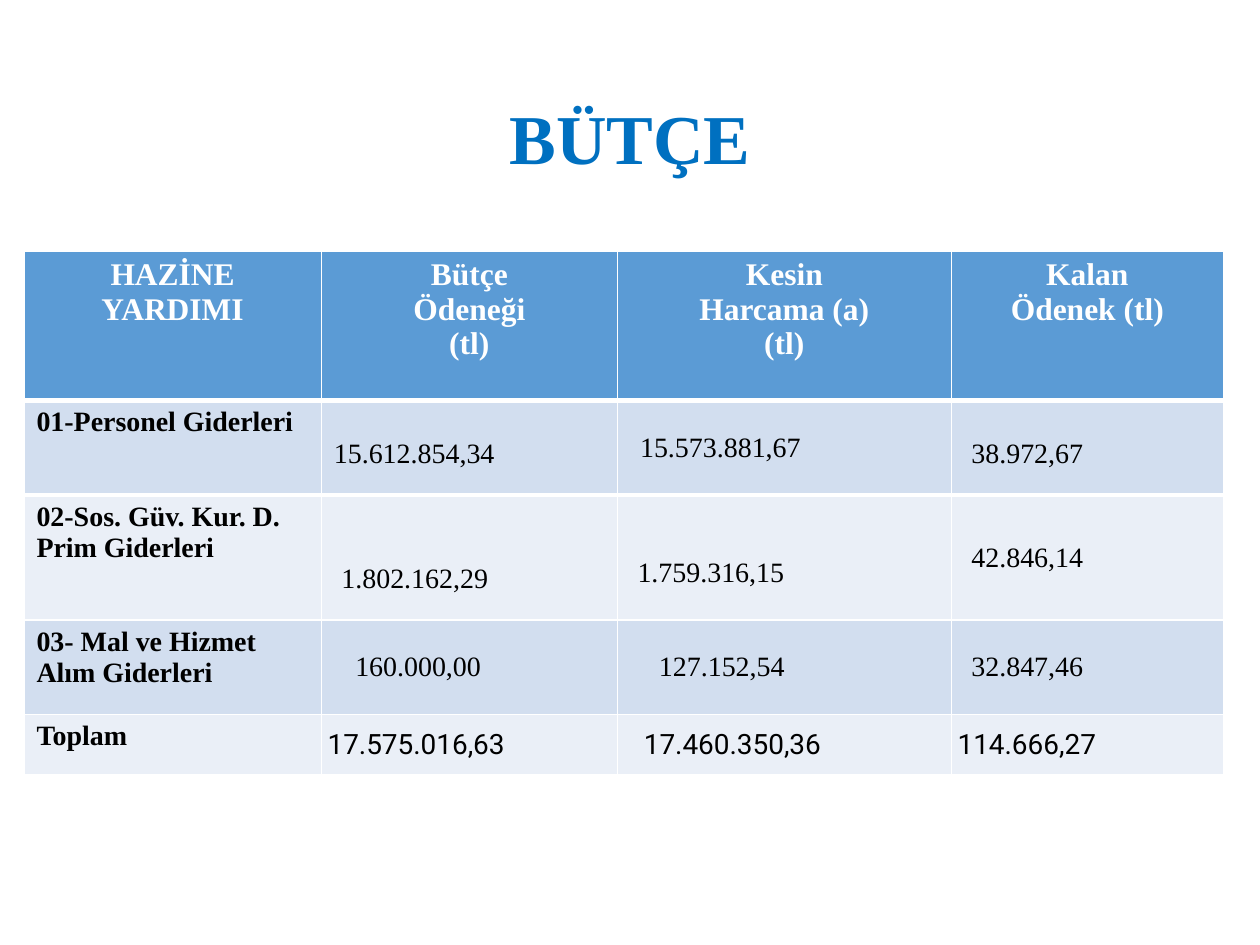
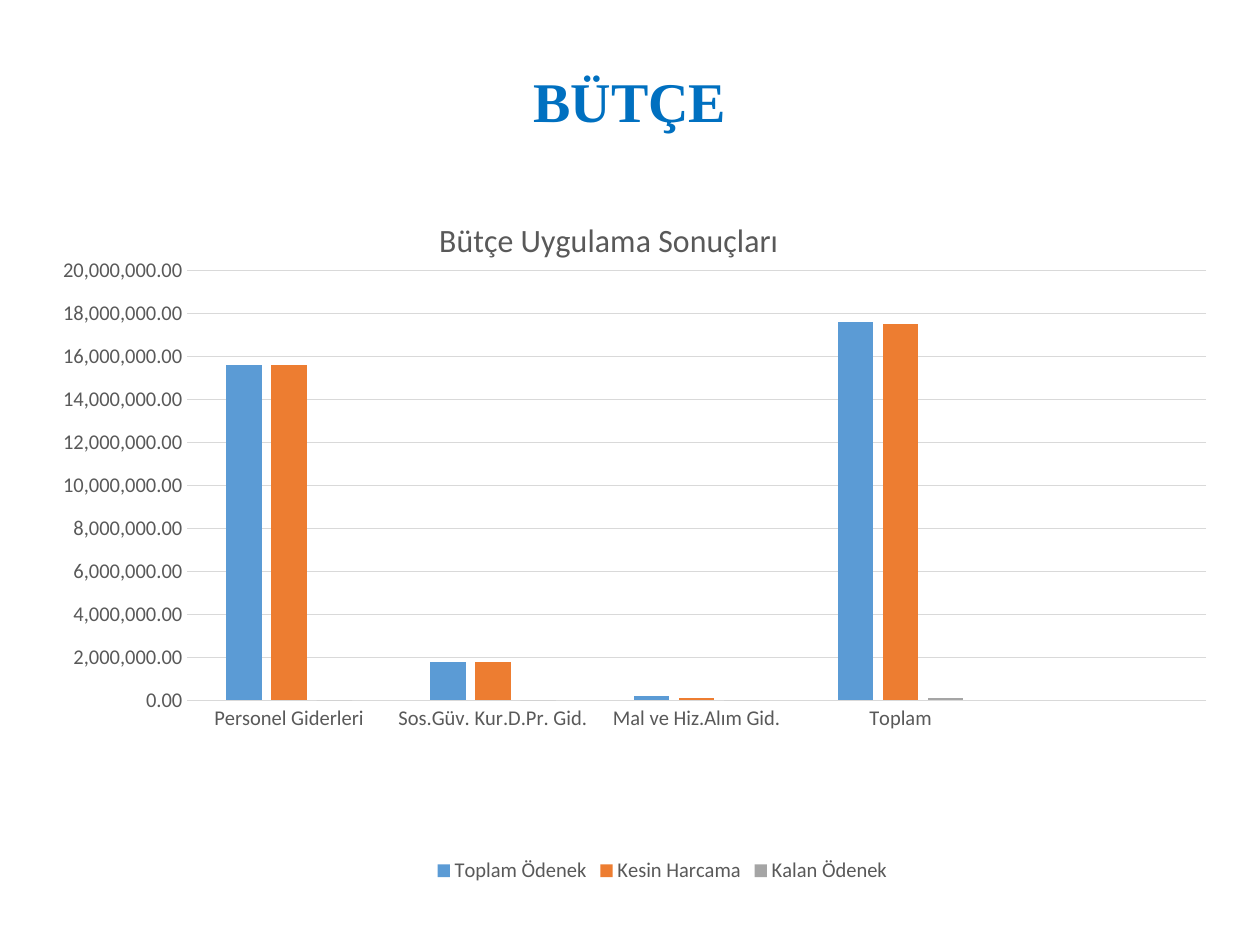
from lxml import etree
from pptx import Presentation
from pptx.chart.data import CategoryChartData
from pptx.dml.color import RGBColor
from pptx.enum.chart import XL_CHART_TYPE as CHART, XL_LEGEND_POSITION as LEGEND, XL_TICK_MARK as TICK
from pptx.enum.text import MSO_ANCHOR as ANCHOR, PP_ALIGN as ALIGN
from pptx.oxml.ns import qn
from pptx.util import Inches, Pt

TITLE_BLUE = RGBColor(0x00, 0x70, 0xC0)
WHITE = RGBColor(0xFF, 0xFF, 0xFF)
BLACK = RGBColor(0x00, 0x00, 0x00)
BLUE = RGBColor(0x5B, 0x9B, 0xD5)
ORANGE = RGBColor(0xED, 0x7D, 0x31)
GRAY = RGBColor(0xA5, 0xA5, 0xA5)
BAND_DARK = RGBColor(0xD2, 0xDE, 0xEF)
BAND_LIGHT = RGBColor(0xEA, 0xEF, 0xF7)
CHART_TEXT = RGBColor(0x59, 0x59, 0x59)
GRID = RGBColor(0xD9, 0xD9, 0xD9)

SERIF, SANS, TOTAL_FONT = "Times New Roman", "Calibri", "Roboto"
HEADER_FONT = {"name": SERIF, "size": Pt(18), "bold": True, "color": WHITE}
LABEL_FONT = {"name": SERIF, "size": Pt(16), "bold": True, "color": BLACK}
AMOUNT_FONT = {**LABEL_FONT, "bold": False}
TOTAL_AMOUNT_FONT = {**AMOUNT_FONT, "name": TOTAL_FONT}
CHART_FONT = {"name": SANS, "size": Pt(12), "bold": False, "color": CHART_TEXT}

COL_WIDTHS = [2.36, 2.35, 2.65, 2.16]
ROW_HEIGHTS = [1.19, 0.75, 0.99, 0.75, 0.48]
HEADERS = ["HAZİNE YARDIMI", "Bütçe\nÖdeneği\n(tl)",
           "Kesin\nHarcama (a)\n(tl)", "Kalan\nÖdenek (tl)"]
# Each amount: text, left inset, drop below the middle of the row
BUDGET = [
    ("01-Personel Giderleri",
     [("15.612.854,34", 0.1, 0.05), ("15.573.881,67", 0.18, 0), ("38.972,67", 0.16, 0.05)]),
    ("02-Sos. Güv. Kur. D. Prim Giderleri",
     [("1.802.162,29", 0.16, 0.17), ("1.759.316,15", 0.16, 0.12), ("42.846,14", 0.16, 0)]),
    ("03- Mal ve Hizmet Alım Giderleri",
     [("160.000,00", 0.27, 0), ("127.152,54", 0.33, 0), ("32.847,46", 0.16, 0)]),
    ("Toplam",
     [("17.575.016,63", 0.05, 0), ("17.460.350,36", 0.21, 0), ("114.666,27", 0.05, 0)]),
]
# The empty last category leaves room at the right of the chart
CATEGORIES = ["Personel Giderleri", "Sos.Güv. Kur.D.Pr. Gid.", "Mal ve Hiz.Alım Gid.", "Toplam", ""]
SERIES = [("Toplam Ödenek", BLUE), ("Kesin Harcama", ORANGE), ("Kalan Ödenek", GRAY)]


def format_font(font, values):
    for name, value in values.items():
        if name == "color":
            font.color.rgb = value
        else:
            setattr(font, name, value)


def add_titled_slide(prs, text, box, size):
    slide = prs.slides.add_slide(prs.slide_layouts[5])
    title = slide.shapes.title
    title.left, title.top, title.width, title.height = map(Inches, box)
    tf = title.text_frame
    tf.text = text
    tf.vertical_anchor = ANCHOR.MIDDLE
    p = tf.paragraphs[0]
    p.alignment, p.line_spacing = ALIGN.CENTER, 0.9
    format_font(p.runs[0].font, {"name": SERIF, "size": Pt(size), "bold": True, "color": TITLE_BLUE})
    return slide


def fill_cell(cell, text, fill, font, align=ALIGN.LEFT):
    cell.fill.solid()
    cell.fill.fore_color.rgb = fill
    cell.text_frame.text = text
    for p in cell.text_frame.paragraphs:
        p.alignment = align
        format_font(p.runs[0].font, font)


def fill_amount(cell, amount, fill, font):
    text, inset, drop = amount
    fill_cell(cell, text, fill, font)
    cell.vertical_anchor = ANCHOR.MIDDLE
    cell.margin_left, cell.margin_right = Inches(inset), Inches(0.05)
    cell.margin_top, cell.margin_bottom = Inches(2 * drop), 0


def rule_below_header(frame):
    """Draw the thick white line between the header and the first row."""
    rows = list(frame.element.iter(qn("a:tr")))
    for row, side in zip(rows, ("a:lnB", "a:lnT")):
        for props in row.iter(qn("a:tcPr")):
            line = etree.Element(qn(side), w=str(Pt(3)))
            fill = etree.SubElement(line, qn("a:solidFill"))
            etree.SubElement(fill, qn("a:srgbClr")).set("val", str(WHITE))
            props.insert(0, line)


def add_budget_table(slide):
    frame = slide.shapes.add_table(
        len(ROW_HEIGHTS), len(COL_WIDTHS), Inches(0.19), Inches(1.99),
        Inches(sum(COL_WIDTHS)), Inches(sum(ROW_HEIGHTS)))
    table = frame.table
    for column, width in zip(table.columns, COL_WIDTHS):
        column.width = Inches(width)
    for row, height in zip(table.rows, ROW_HEIGHTS):
        row.height = Inches(height)
    for col, header in enumerate(HEADERS):
        fill_cell(table.cell(0, col), header, BLUE, HEADER_FONT, ALIGN.CENTER)
    for row, (label, amounts) in enumerate(BUDGET, 1):
        band = BAND_DARK if row % 2 else BAND_LIGHT
        font = TOTAL_AMOUNT_FONT if row == len(BUDGET) else AMOUNT_FONT
        fill_cell(table.cell(row, 0), label, band, LABEL_FONT)
        for col, amount in enumerate(amounts, 1):
            fill_amount(table.cell(row, col), amount, band, font)
    rule_below_header(frame)


def to_chart_value(text):
    """Turn an amount into a number rounded to a hundred thousand."""
    return round(float(text.replace(".", "").replace(",", ".")) / 100000) * 100000


def place_chart_part(chart, tag, successor, **values):
    """Give a chart part a manual layout, in fractions of the chart."""
    part = next(chart.element.iter(qn(tag)))
    for old in part.findall(qn("c:layout")):
        part.remove(old)
    layout = etree.Element(qn("c:layout"))
    manual = etree.SubElement(layout, qn("c:manualLayout"))
    for name, value in values.items():
        etree.SubElement(manual, qn("c:" + name)).set("val", str(value))
    part.find(qn(successor)).addprevious(layout)


def format_axes(chart):
    for axis in (chart.category_axis, chart.value_axis):
        axis.major_tick_mark = axis.minor_tick_mark = TICK.NONE
        format_font(axis.tick_labels.font, CHART_FONT)
    values = chart.value_axis
    values.minimum_scale, values.maximum_scale, values.major_unit = 0, 20000000, 2000000
    values.tick_labels.number_format = "#,##0.00"
    values.tick_labels.number_format_is_linked = False
    values.format.line.fill.background()
    values.has_major_gridlines = True
    for line in (chart.category_axis.format.line, values.major_gridlines.format.line):
        line.color.rgb, line.width = GRID, Pt(0.75)


def add_budget_chart(slide):
    data = CategoryChartData(number_format="#,##0.00")
    data.categories = CATEGORIES
    for i, (name, _) in enumerate(SERIES):
        data.add_series(name, [to_chart_value(amounts[i][0]) for _, amounts in BUDGET] + [None])
    chart = slide.shapes.add_chart(
        CHART.COLUMN_CLUSTERED, Inches(0.5), Inches(1.45), Inches(9.3), Inches(5.6), data).chart
    format_font(chart.font, {**CHART_FONT, "size": Pt(10), "color": BLACK})
    plot = chart.plots[0]
    plot.gap_width, plot.overlap, plot.vary_by_categories = 219, -27, False
    for series, (_, color) in zip(plot.series, SERIES):
        series.format.fill.solid()
        series.format.fill.fore_color.rgb = color
        series.invert_if_negative = False
    format_axes(chart)

    chart.has_title = True
    tf = chart.chart_title.text_frame
    tf.text = "Bütçe Uygulama Sonuçları"
    format_font(tf.paragraphs[0].runs[0].font, {**CHART_FONT, "size": Pt(18.6)})
    chart.chart_title.include_in_layout = False
    chart.has_legend = True
    chart.legend.position = LEGEND.BOTTOM
    chart.legend.include_in_layout = False
    format_font(chart.legend.font, CHART_FONT)

    place_chart_part(chart, "c:title", "c:overlay", xMode="edge", yMode="edge", x=0.3, y=0.04)
    place_chart_part(chart, "c:plotArea", "c:barChart", layoutTarget="inner",
                     xMode="edge", yMode="edge", x=0.085, y=0.124, w=0.89, h=0.61)


def main():
    prs = Presentation()
    prs.slide_width, prs.slide_height = Inches(10), Inches(7.5)
    add_budget_table(add_titled_slide(prs, "BÜTÇE", (0.69, 0.4, 8.62, 1.45), 40))
    add_budget_chart(add_titled_slide(prs, "BÜTÇE", (0.5, 0.2, 9, 1.25), 32))
    prs.save("out.pptx")


if __name__ == "__main__":
    main()
